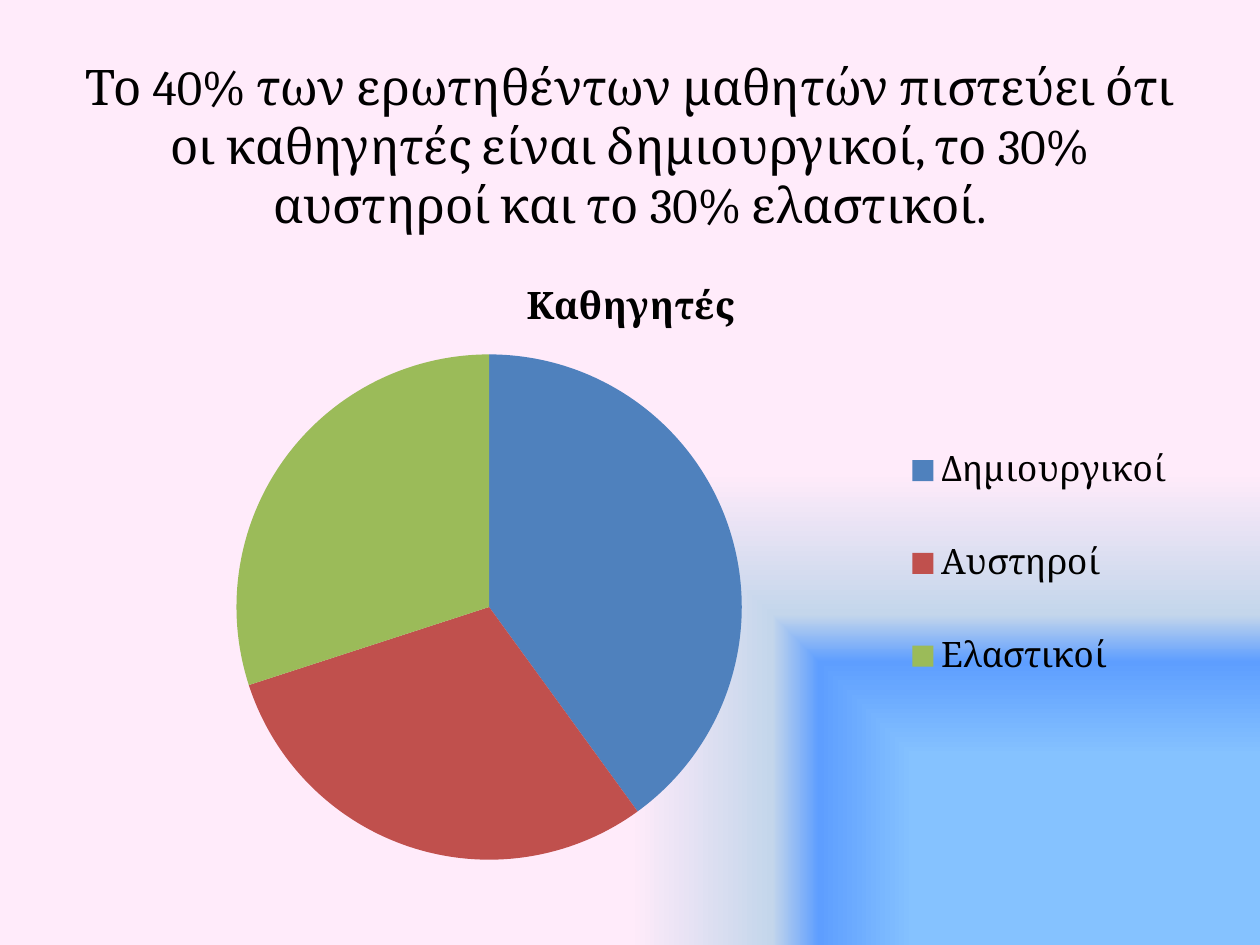
from lxml.etree import SubElement
from pptx import Presentation
from pptx.chart.data import CategoryChartData as ChartData
from pptx.dml.color import RGBColor
from pptx.enum.chart import XL_CHART_TYPE as ChartType, XL_LEGEND_POSITION as LegendPosition
from pptx.enum.text import MSO_ANCHOR as Anchor, PP_ALIGN as Align
from pptx.oxml.ns import qn
from pptx.util import Pt

BLACK = RGBColor(0x00, 0x00, 0x00)
BLUE = RGBColor(0x4F, 0x81, 0xBD)
RED = RGBColor(0xC0, 0x50, 0x4D)
GREEN = RGBColor(0x9B, 0xBB, 0x59)
SKY = RGBColor(0x85, 0xC2, 0xFF)
AZURE = RGBColor(0x5E, 0x9E, 0xFF)
MIST = RGBColor(0xC4, 0xD6, 0xEB)
PINK = RGBColor(0xFF, 0xEB, 0xFA)

BACKGROUND_STOPS = [(40, SKY, 100), (60, AZURE, 70), (70, MIST, 100), (100, PINK, 100)]
HEADING = (
    "Το 40% των ερωτηθέντων μαθητών πιστεύει ότι οι καθηγητές είναι "
    "δημιουργικοί, το 30% αυστηροί και το 30% ελαστικοί."
)
CHART_TITLE = "Καθηγητές"
ANSWERS = [("Δημιουργικοί", 40, BLUE), ("Αυστηροί", 30, RED), ("Ελαστικοί", 30, GREEN)]


def set_format(target, values):
    for name, value in values.items():
        setattr(target, name, value)


def set_font(font, name, size, bold=False):
    set_format(font, {"name": name, "size": Pt(size), "bold": bold})
    font.color.rgb = BLACK


def paint_background(page):
    page.background.fill.gradient()
    gradient = page.element.find(".//" + qn("a:gradFill"))
    for child in list(gradient):
        gradient.remove(child)
    stops = SubElement(gradient, qn("a:gsLst"))
    for position, color, opacity in BACKGROUND_STOPS:
        stop = SubElement(stops, qn("a:gs"), pos=str(position * 1000))
        shade = SubElement(stop, qn("a:srgbClr"), val=str(color))
        if opacity < 100:
            SubElement(shade, qn("a:alpha"), val=str(opacity * 1000))
    spread = SubElement(gradient, qn("a:path"), path="rect")
    SubElement(spread, qn("a:fillToRect"), l="100000", t="100000")


def add_heading(page, text, left, top, width, height):
    box = page.shapes.add_textbox(Pt(left), Pt(top), Pt(width), Pt(height))
    frame = box.text_frame
    set_format(frame, {"word_wrap": True, "vertical_anchor": Anchor.MIDDLE})
    para = frame.paragraphs[0]
    para.alignment = Align.CENTER
    span = para.add_run()
    span.text = text
    set_font(span.font, "Cambria", 28)


def place_chart_part(part, index, **place):
    for old in part.findall(qn("c:layout")):
        part.remove(old)
    layout = part.makeelement(qn("c:layout"))
    part.insert(index, layout)
    manual = SubElement(layout, qn("c:manualLayout"))
    for name, value in place.items():
        SubElement(manual, qn("c:" + name), val=str(value))


def add_pie(page, left, top, width, height):
    data = ChartData()
    data.categories = [label for label, _, _ in ANSWERS]
    data.add_series(CHART_TITLE, [value for _, value, _ in ANSWERS])
    chart = page.shapes.add_chart(
        ChartType.PIE, Pt(left), Pt(top), Pt(width), Pt(height), data
    ).chart
    set_font(chart.font, "Calibri", 18)

    chart.has_title = True
    title = chart.chart_title
    title.include_in_layout = False
    span = title.text_frame.paragraphs[0].add_run()
    span.text = CHART_TITLE
    set_font(span.font, "Cambria", 21.6, bold=True)

    chart.has_legend = True
    legend = chart.legend
    set_format(legend, {"position": LegendPosition.RIGHT, "include_in_layout": False})
    set_font(legend.font, "Cambria", 20)

    plot = chart.plots[0]
    plot.vary_by_categories = True
    for index, (_, _, color) in enumerate(ANSWERS):
        fill = plot.series[0].points[index].format.fill
        fill.solid()
        fill.fore_color.rgb = color

    chart_root = chart.element
    place_chart_part(
        chart_root.find(".//" + qn("c:plotArea")), 0,
        layoutTarget="inner", xMode="edge", yMode="edge", x=0.15, y=0.16, w=0.45, h=0.81,
    )
    place_chart_part(
        chart_root.find(".//" + qn("c:legend")), 1,
        xMode="edge", yMode="edge", x=0.73, y=0.23, w=0.26, h=0.53,
    )


def main():
    deck = Presentation()
    set_format(deck, {"slide_width": Pt(720), "slide_height": Pt(540)})
    page = deck.slides.add_slide(deck.slide_layouts[6])
    paint_background(page)
    add_heading(page, HEADING, 36, 15, 648, 136)
    add_pie(page, 36.5, 145.5, 648, 356.5)
    deck.save("out.pptx")


if __name__ == "__main__":
    main()
